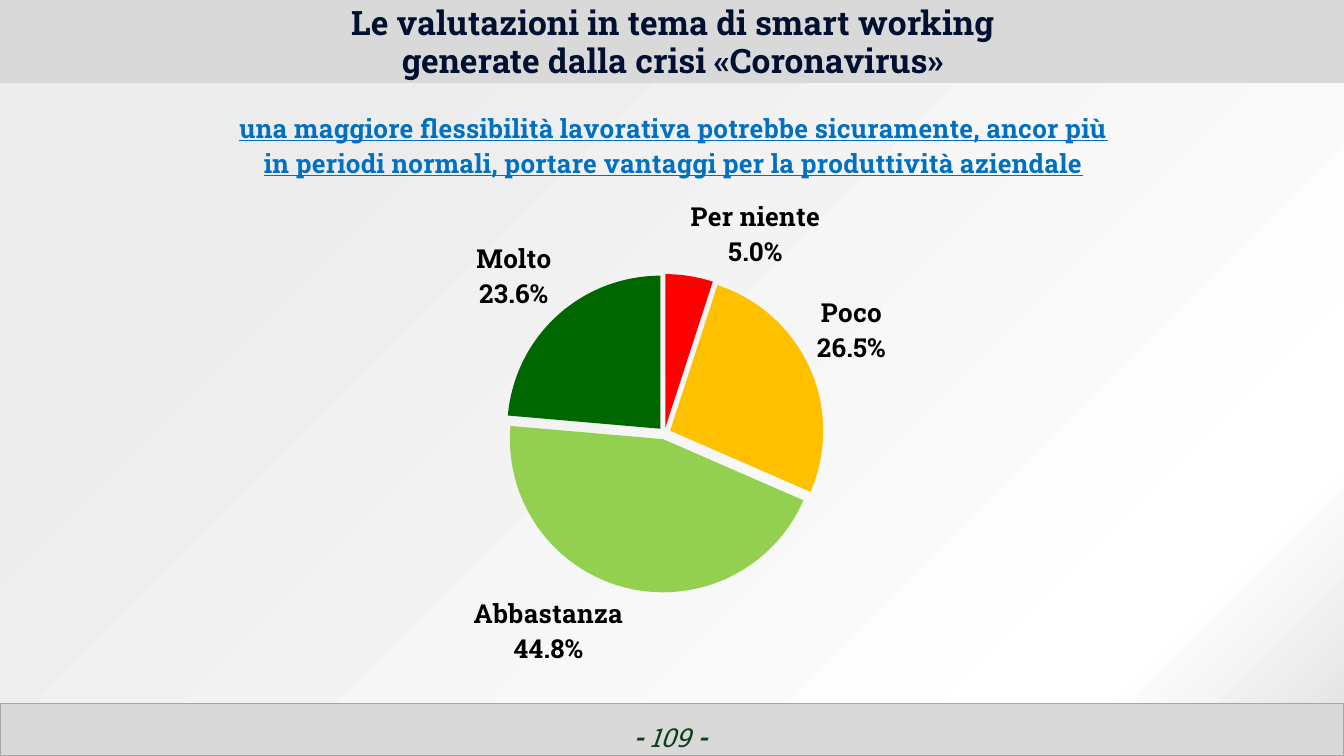
import lxml.etree
import pptx
import pptx.chart.data
import pptx.dml.color
import pptx.enum.chart
import pptx.enum.shapes
import pptx.enum.text
import pptx.oxml
import pptx.oxml.ns
import pptx.util

Inches = pptx.util.Inches
Pt = pptx.util.Pt
qn = pptx.oxml.ns.qn

PAGE_WIDTH = 10
PAGE_HEIGHT = PAGE_WIDTH * 9 / 16
FOOTER_HEIGHT = 0.39
COLORS = {
    "band": "D9D9D9",
    "band_edge": "A6A6A6",
    "title": "001030",
    "question": "0070C0",
    "page": "0D411A",
    "text": "000000",
}
BACKDROP_STOPS = [(0, "E6E6E6"), (13, "FFFFFF"), (82, "ECECEC")]
ANSWERS = [
    ("Per niente", 0.05, "FF0000"),
    ("Poco", 0.265, "FFC000"),
    ("Abbastanza", 0.448, "93D050"),
    ("Molto", 0.236, "006600"),
]
QUESTION = (
    "una maggiore flessibilità lavorativa potrebbe sicuramente, ancor più\n"
    "in periodi normali, portare vantaggi per la produttività aziendale"
)


def rgb(value):
    return pptx.dml.color.RGBColor.from_string(value)


def set_layout(parent, index, **settings):
    layout = parent.find(qn("c:layout"))
    if layout is None:
        layout = lxml.etree.Element(qn("c:layout"))
        parent.insert(index, layout)
    manual = lxml.etree.SubElement(layout, qn("c:manualLayout"))
    for tag, value in settings.items():
        lxml.etree.SubElement(manual, qn(f"c:{tag}")).set("val", str(value))


class SlideBuilder:
    font = "Roboto Slab"

    def __init__(self, slide):
        self.slide = slide

    def style(self, font, size, color, bold=True):
        font.name = self.font
        font.size = Pt(size)
        font.bold = bold
        font.color.rgb = rgb(color)

    def band(self, top, height, fill, edge=None):
        band = self.slide.shapes.add_shape(
            pptx.enum.shapes.MSO_SHAPE.RECTANGLE,
            0, Inches(top), Inches(PAGE_WIDTH), Inches(height),
        )
        band.shadow.inherit = False
        band.fill.solid()
        band.fill.fore_color.rgb = rgb(fill)
        if edge:
            band.line.color.rgb = rgb(edge)
            band.line.width = Pt(0.75)
        else:
            band.line.fill.background()
        return band

    def backdrop(self, top, height, stops):
        backdrop = self.band(top, height, stops[0][1])
        stop_xml = "".join(
            f'<a:gs pos="{position * 1000}"><a:srgbClr val="{color}"/></a:gs>'
            for position, color in stops
        )
        gradient = pptx.oxml.parse_xml(
            f'<a:gradFill {pptx.oxml.ns.nsdecls("a")} rotWithShape="1"><a:gsLst>{stop_xml}</a:gsLst>'
            '<a:path path="circle"><a:fillToRect l="100000" t="100000"/></a:path></a:gradFill>'
        )
        properties = backdrop._element.spPr
        properties.replace(properties.find(qn("a:solidFill")), gradient)

    def text(self, left, top, width, height, runs, size, color, italic=False, spacing=None, middle=False):
        box = self.slide.shapes.add_textbox(Inches(left), Inches(top), Inches(width), Inches(height))
        frame = box.text_frame
        frame.word_wrap = True
        if middle:
            frame.vertical_anchor = pptx.enum.text.MSO_ANCHOR.MIDDLE
        paragraph = frame.paragraphs[0]
        paragraph.alignment = pptx.enum.text.PP_ALIGN.CENTER
        if spacing:
            paragraph.line_spacing = Pt(spacing)
        for index, (words, bold) in enumerate(runs):
            if index:
                paragraph.add_run().text = words
            else:
                paragraph.text = words
            for run in paragraph.runs[index:]:
                self.style(run.font, size, color, bold)
                run.font.italic = italic

    def pie(self, left, top, width, height, heading, answers):
        data = pptx.chart.data.CategoryChartData(number_format="0.0%")
        data.categories = [name for name, _, _ in answers]
        data.add_series("Series 1", [share for _, share, _ in answers])
        chart = self.slide.shapes.add_chart(
            pptx.enum.chart.XL_CHART_TYPE.PIE,
            Inches(left), Inches(top), Inches(width), Inches(height), data,
        ).chart
        chart.has_legend = False
        chart.font.name = "Calibri"
        chart.font.size = Pt(10)
        chart.font.color.rgb = rgb(COLORS["text"])

        chart.has_title = True
        title = chart.chart_title
        title.text_frame.text = heading
        for paragraph in title.text_frame.paragraphs:
            for run in paragraph.runs:
                self.style(run.font, 14, COLORS["question"])
                run.font.underline = True
        set_layout(
            title._element, 1, xMode="edge", yMode="edge", x=1.72 / width, y=0.14 / height
        )
        title._element.find(qn("c:overlay")).set("val", "1")

        plot = chart.plots[0]
        plot.vary_by_categories = True
        set_layout(
            plot._element.getparent(), 0, layoutTarget="inner", xMode="edge", yMode="edge",
            x=2.32 / width, y=1.41 / height, w=5.19 / width, h=2.37 / height,
        )
        series = plot.series[0]
        explosion = lxml.etree.Element(qn("c:explosion"))
        explosion.set("val", "4")
        series._element.find(qn("c:tx")).addnext(explosion)
        for index, (_, _, color) in enumerate(answers):
            fill = series.points[index].format.fill
            fill.solid()
            fill.fore_color.rgb = rgb(color)

        labels = series.data_labels
        labels.show_category_name = True
        labels.show_value = True
        labels.show_percentage = False
        labels.number_format = "0.0%"
        labels.number_format_is_linked = False
        labels.position = pptx.enum.chart.XL_LABEL_POSITION.OUTSIDE_END
        self.style(labels.font, 14, COLORS["text"])
        separator = lxml.etree.Element(qn("c:separator"))
        separator.text = "\n"
        labels._element.find(qn("c:showBubbleSize")).addnext(separator)


def main():
    deck = pptx.Presentation()
    deck.slide_width = Inches(PAGE_WIDTH)
    deck.slide_height = Inches(PAGE_HEIGHT)
    builder = SlideBuilder(deck.slides.add_slide(deck.slide_layouts[6]))
    builder.band(0, 0.63, COLORS["band"])
    builder.band(PAGE_HEIGHT - FOOTER_HEIGHT, FOOTER_HEIGHT, COLORS["band"], COLORS["band_edge"])
    builder.backdrop(0.62, 4.61, BACKDROP_STOPS)
    builder.text(
        3.82, 5.32, 2.33, 0.39, [("- ", True), ("109", False), (" -", True)],
        14, COLORS["page"], italic=True,
    )
    builder.text(
        0.16, 0.02, 9.69, 0.59,
        [("Le valutazioni in tema di smart working\vgenerate dalla crisi «Coronavirus»", True)],
        18, COLORS["title"], spacing=20, middle=True,
    )
    builder.pie(0.03, 0.63, 9.97, 4.54, QUESTION, ANSWERS)
    deck.save("out.pptx")


if __name__ == "__main__":
    main()
